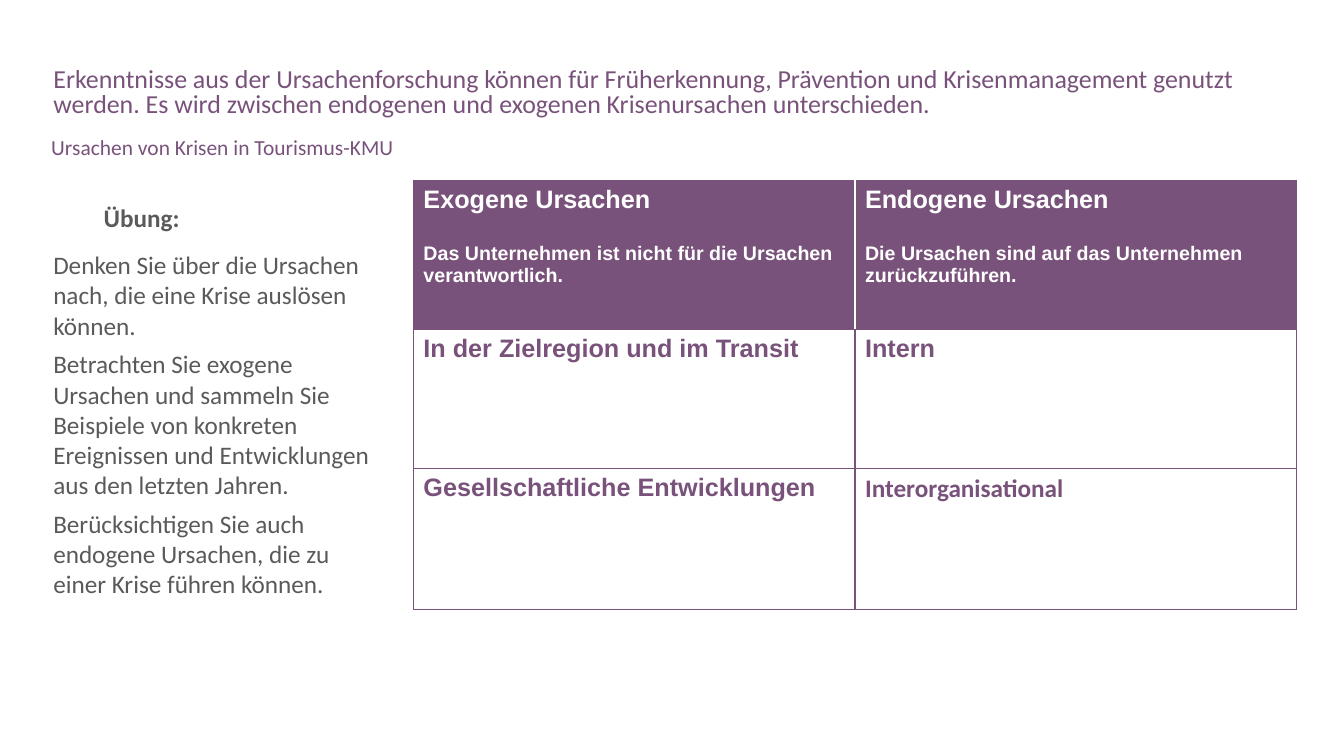
import pptx
import pptx.dml.color
import pptx.enum.text
import pptx.oxml
import pptx.oxml.ns
import pptx.util
from pptx.util import Inches

COLORS = {"plum": "79527B", "grey": "595A59", "white": "FFFFFF"}
ALIGN = pptx.enum.text.PP_ALIGN
ANCHOR = pptx.enum.text.MSO_ANCHOR


def write(frame, entries):
    """Fill a frame with (text, font values, paragraph values) entries."""
    for number, (text, font, layout) in enumerate(entries):
        para = frame.paragraphs[0] if number == 0 else frame.add_paragraph()
        para.alignment = ALIGN.LEFT
        for name, value in layout.items():
            setattr(para, name, value)
        span = para.add_run()
        span.text = text
        span.font.color.rgb = pptx.dml.color.RGBColor.from_string(COLORS[font["color"]])
        span.font.size = pptx.util.Pt(font["size"])
        span.font.name = font["name"]
        span.font.bold = font.get("bold", False)


def draw_borders(cell, sides):
    """Draw one-point cell borders; sides maps L, R, T, B to color names in that order."""
    properties = cell._tc.get_or_add_tcPr()
    for position, (side, color) in enumerate(sides.items()):
        properties.insert(position, pptx.oxml.parse_xml(
            f'<a:ln{side} {pptx.oxml.ns.nsdecls("a")} w="12700"><a:solidFill>'
            f'<a:srgbClr val="{COLORS[color]}"/></a:solidFill></a:ln{side}>'))


deck = pptx.Presentation()
deck.slide_width = Inches(13.33)
deck.slide_height = Inches(7.5)
page = deck.slides.add_slide(deck.slide_layouts[5])

# Title, subtitle and exercise
title = page.shapes.title
title.left, title.top, title.width, title.height = map(Inches, (0.43, 0.63, 12.54, 0.64))
subtitle = page.shapes.add_textbox(*map(Inches, (0.41, 1.35, 12.56, 0.28)))
exercise = page.shapes.add_textbox(*map(Inches, (0.43, 1.79, 3.49, 4.37)))
for box, anchor in ((title, ANCHOR.TOP), (subtitle, ANCHOR.TOP), (exercise, ANCHOR.MIDDLE)):
    box.text_frame.word_wrap = True
    box.text_frame.auto_size = pptx.enum.text.MSO_AUTO_SIZE.NONE
    box.text_frame.vertical_anchor = anchor

heading = {"name": "Calibri", "size": 18.5, "color": "plum"}
write(title.text_frame, [(
    "Erkenntnisse aus der Ursachenforschung können für Früherkennung, Prävention und "
    "Krisenmanagement genutzt werden. Es wird zwischen endogenen und exogenen "
    "Krisenursachen unterschieden.", heading, {"line_spacing": 0.8})])
write(subtitle.text_frame, [(
    "Ursachen von Krisen in Tourismus-KMU", {**heading, "size": 15.3}, {"line_spacing": 0.7})])

body = {"name": "Calibri", "size": 18, "color": "grey"}
write(exercise.text_frame, [
    ("\tÜbung:", {**body, "bold": True}, {}),
    ("Denken Sie über die Ursachen nach, die eine Krise auslösen können.",
     body, {"space_before": pptx.util.Pt(12)}),
    ("Betrachten Sie exogene Ursachen und sammeln Sie Beispiele von konkreten "
     "Ereignissen und Entwicklungen aus den letzten Jahren.",
     body, {"space_before": pptx.util.Pt(6)}),
    ("Berücksichtigen Sie auch endogene Ursachen, die zu einer Krise führen können.",
     body, {"space_before": pptx.util.Pt(6)}),
])

# Table of causes
label = {"name": "Arial", "size": 18, "color": "plum", "bold": True}
header = {**label, "color": "white"}
explanation = {**header, "size": 14}
gap = {"space_before": pptx.util.Pt(21)}
causes = [
    [[("Exogene Ursachen", header, {}),
      ("Das Unternehmen ist nicht für die Ursachen verantwortlich.", explanation, gap)],
     [("Endogene Ursachen", header, {}),
      ("Die Ursachen sind auf das Unternehmen zurückzuführen.", explanation, gap)]],
    [[("In der Zielregion und im Transit", label, {})],
     [("Intern", label, {})]],
    [[("Gesellschaftliche Entwicklungen", label, {})],
     [("Interorganisational", {**label, "name": "Calibri"}, {})]],
]
table = page.shapes.add_table(3, 2, *map(Inches, (4.1, 1.79, 8.76, 4.26))).table
for row, height in zip(table.rows, (1.48, 1.38, 1.4)):
    row.height = Inches(height)
for row_number, row_entries in enumerate(causes):
    for column_number, entries in enumerate(row_entries):
        cell = table.cell(row_number, column_number)
        write(cell.text_frame, entries)
        sides = dict.fromkeys("LRTB", "plum")
        if row_number == 0:
            cell.fill.solid()
            cell.fill.fore_color.rgb = pptx.dml.color.RGBColor.from_string(COLORS["plum"])
            sides["R" if column_number == 0 else "L"] = "white"
        else:
            cell.fill.background()
        draw_borders(cell, sides)

deck.save("out.pptx")
